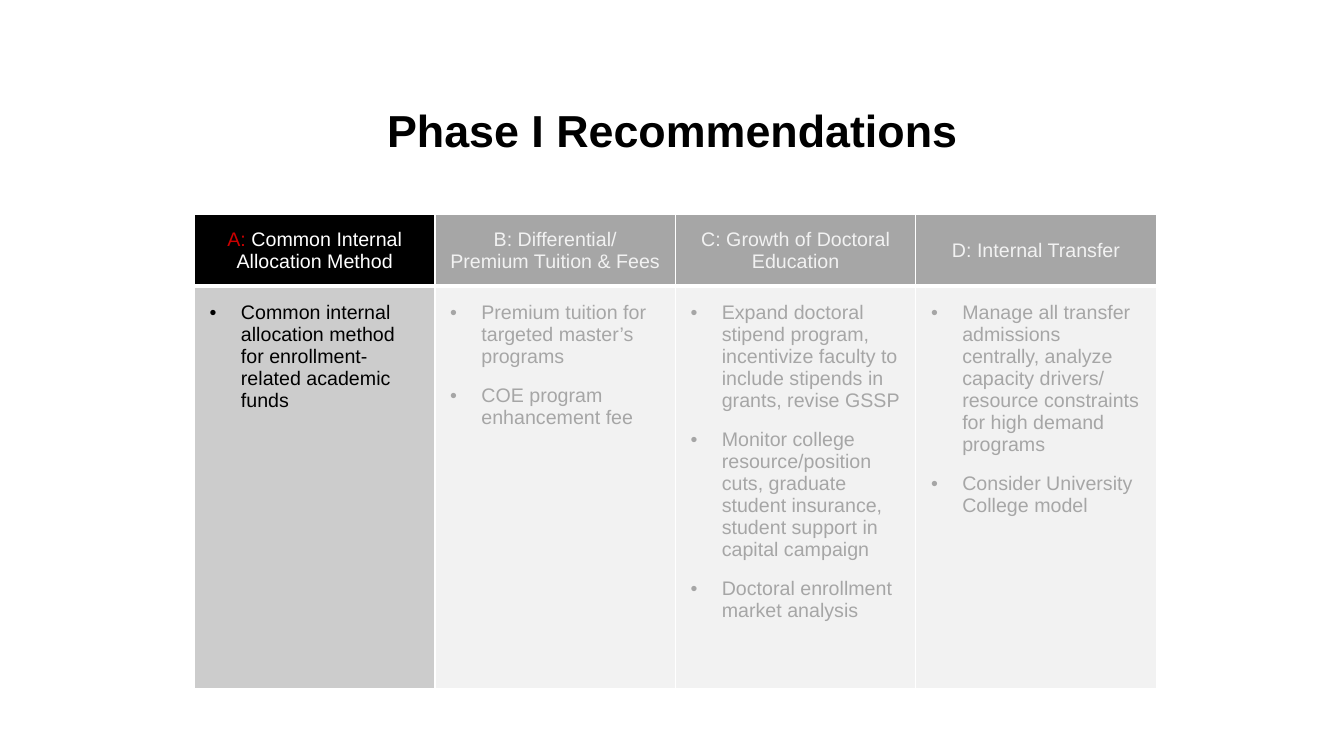
from pptx import Presentation
from pptx.dml.color import RGBColor
from pptx.enum.text import MSO_ANCHOR, PP_ALIGN
from pptx.util import Emu, Inches, Pt
from lxml.etree import SubElement
from pptx.oxml.ns import qn

WHITE, BLACK, RED = "FFFFFF", "000000", "CC0000"
PALE, GREY, MID = "F2F2F2", "A6A6A6", "CCCCCC"

# Each column: header lines as (text, colour) runs, then its bullets
plan = [
    ([[("A:", RED), (" Common Internal Allocation Method", WHITE)]],
     ["Common internal allocation method for enrollment-related academic funds"]),
    ([[("B: Differential/", PALE)], [("Premium Tuition & Fees", PALE)]],
     ["Premium tuition for targeted master’s programs",
      "COE program enhancement fee"]),
    ([[("C: Growth of Doctoral Education", PALE)]],
     ["Expand doctoral stipend program, incentivize faculty to include "
      "stipends in grants, revise GSSP",
      "Monitor college resource/position cuts, graduate student insurance, "
      "student support in capital campaign",
      "Doctoral enrollment market analysis"]),
    ([[("D: Internal Transfer", PALE)]],
     ["Manage all transfer admissions centrally, analyze capacity drivers/ "
      "resource constraints for high demand programs",
      "Consider University College model"]),
]


def add_run(para, text, color, size=14, bold=False):
    run = para.add_run()
    run.text = text
    run.font.name = "Arial"
    run.font.size = Pt(size)
    run.font.bold = bold
    run.font.color.rgb = RGBColor.from_string(color)


def style_cell(cell, fill, thick):
    """Fill the cell and edge it in white, with a 3 pt line on the thick side."""
    props = cell._tc.get_or_add_tcPr()
    for side in ("lnL", "lnR", "lnT", "lnB"):
        width = Pt(3 if side == thick else 1)
        line = SubElement(props, qn(f"a:{side}"), w=str(width))
        paint = SubElement(line, qn("a:solidFill"))
        SubElement(paint, qn("a:srgbClr"), val=WHITE)
    cell.fill.solid()
    cell.fill.fore_color.rgb = RGBColor.from_string(fill)


deck = Presentation()
deck.slide_width, deck.slide_height = Inches(13.33), Inches(7.5)
slide = deck.slides.add_slide(deck.slide_layouts[5])

title = slide.shapes.title
title.left, title.top = Inches(1.67), Inches(0.73)
title.width, title.height = Inches(10), Inches(1.12)
title.text_frame.vertical_anchor = MSO_ANCHOR.MIDDLE
para = title.text_frame.paragraphs[0]
para.alignment = PP_ALIGN.CENTER
add_run(para, "Phase I Recommendations", BLACK, 32, True)

frame = slide.shapes.add_table(2, len(plan), Inches(1.93), Inches(2.13),
                               Inches(9.54), Inches(4.7))
table = frame.table
table.rows[0].height, table.rows[1].height = Inches(0.71), Inches(3.99)

for col, (lines, points) in enumerate(plan):
    active = col == 0
    head, body = table.cell(0, col), table.cell(1, col)
    style_cell(head, BLACK if active else GREY, "lnB")
    style_cell(body, MID if active else PALE, "lnT")

    head.vertical_anchor = MSO_ANCHOR.MIDDLE
    for i, line in enumerate(lines):
        text = head.text_frame
        para = text.add_paragraph() if i else text.paragraphs[0]
        para.alignment = PP_ALIGN.CENTER
        for words, color in line:
            add_run(para, words, color)

    body.margin_left = body.margin_right = Inches(0.15)
    body.margin_top = body.margin_bottom = Inches(0.15)
    for i, point in enumerate(points):
        text = body.text_frame
        para = text.add_paragraph() if i else text.paragraphs[0]
        props = para._p.get_or_add_pPr()
        indent = Emu(Inches(0.31))
        props.set("marL", str(indent))
        props.set("indent", str(-indent))
        SubElement(props, qn("a:buFont"), typeface="Arial")
        SubElement(props, qn("a:buChar"), char="•")
        para.space_after = Pt(12)
        add_run(para, point, BLACK if active else GREY)

deck.save("out.pptx")
